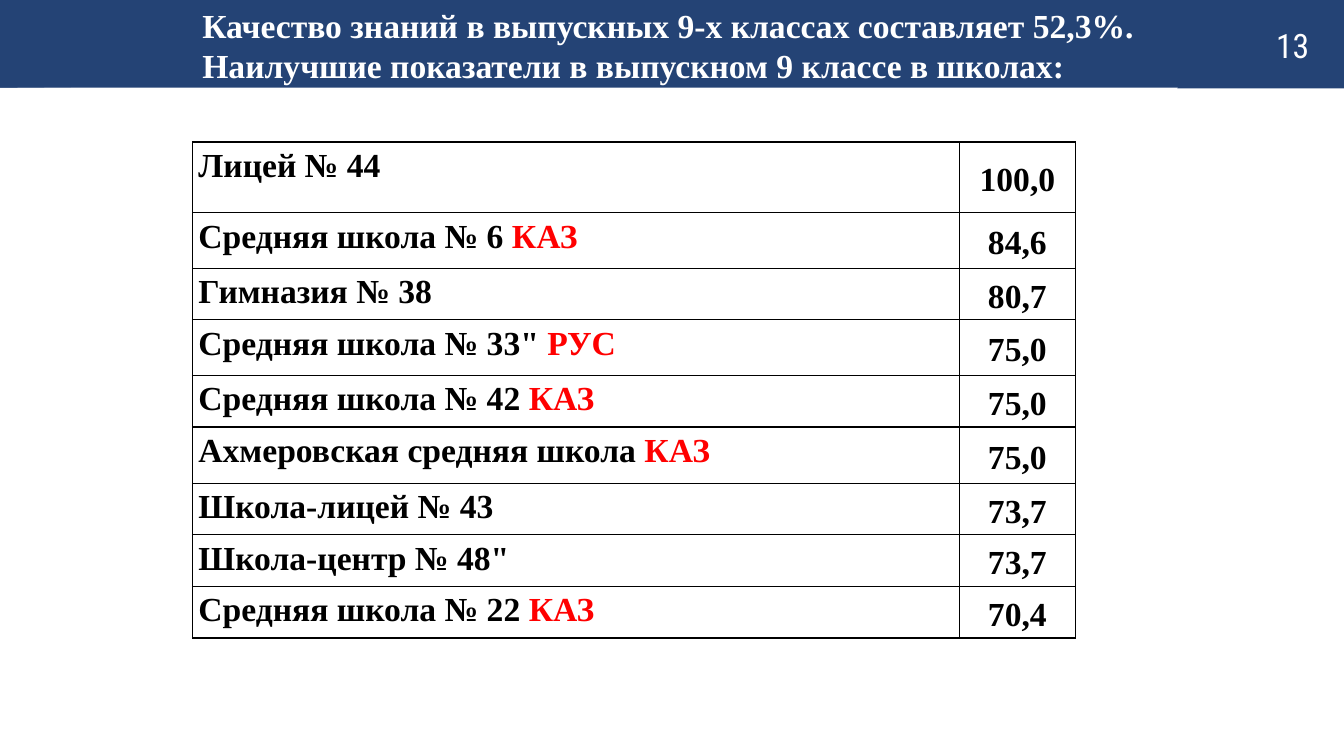
from dataclasses import dataclass

from lxml import etree
from pptx import Presentation
from pptx.dml.color import RGBColor
from pptx.enum.shapes import MSO_SHAPE
from pptx.enum.text import MSO_ANCHOR, PP_ALIGN
from pptx.oxml.ns import qn
from pptx.util import Cm, Pt

RECTANGLE = MSO_SHAPE.RECTANGLE
MIDDLE, TOP = MSO_ANCHOR.MIDDLE, MSO_ANCHOR.TOP
CENTER, LEFT = PP_ALIGN.CENTER, PP_ALIGN.LEFT


@dataclass(frozen=True)
class Theme:
    band: RGBColor = RGBColor(0x24, 0x43, 0x75)
    light: RGBColor = RGBColor(0xFF, 0xFF, 0xFF)
    dark: RGBColor = RGBColor(0x00, 0x00, 0x00)
    accent: RGBColor = RGBColor(0xFF, 0x00, 0x00)
    text_font: str = "Times New Roman"
    number_font: str = "Roboto Condensed"
    text_size: Pt = Pt(24)
    border: Pt = Pt(1)


THEME = Theme()
SLIDE_WIDTH, SLIDE_HEIGHT = 33.87, 19.05
TITLE = (
    "Качество знаний в выпускных 9-х классах составляет 52,3%.",
    "Наилучшие показатели в выпускном 9 классе в школах:",
)
# School, language of teaching, quality of knowledge, row height in cm
SCHOOLS = (
    ("Лицей № 44", "", "100,0", 1.78),
    ("Средняя школа № 6", "КАЗ", "84,6", 1.4),
    ("Гимназия № 38", "", "80,7", 1.3),
    ('Средняя школа № 33"', "РУС", "75,0", 1.4),
    ("Средняя школа № 42", "КАЗ", "75,0", 1.3),
    ("Ахмеровская средняя школа", "КАЗ", "75,0", 1.42),
    ("Школа-лицей № 43", "", "73,7", 1.3),
    ('Школа-центр № 48"', "", "73,7", 1.3),
    ("Средняя школа № 22", "КАЗ", "70,4", 1.3),
)


def set_font(paragraph, color, name=THEME.text_font, bold=True):
    font = paragraph.font
    font.name, font.size, font.bold = name, THEME.text_size, bold
    font.color.rgb = color


def paint_band(shape):
    shape.shadow.inherit = False
    shape.fill.solid()
    shape.fill.fore_color.rgb = THEME.band
    shape.line.fill.background()


def add_outline(slide, points):
    start, *others = [(Cm(x), Cm(y)) for x, y in points]
    builder = slide.shapes.build_freeform(*start, scale=1.0)
    builder.add_line_segments(others, close=True)
    paint_band(builder.convert_to_shape())


def add_header_band(slide, left, top, width, height):
    """Draw the full band with a slanted piece at each end."""
    paint_band(slide.shapes.add_shape(RECTANGLE, Cm(left), Cm(top), Cm(width), Cm(height)))
    right, bottom = left + width, top + height
    add_outline(slide, [(left + 4.22, top), (left, top),
                        (left, bottom), (left + 3.2, bottom - 0.03)])
    add_outline(slide, [(right, top + 0.03), (right - 3.19, top + 0.03),
                        (right - 4.2, bottom + 0.02), (right, bottom + 0.02)])


def add_page_number(slide, left, top, width, height, number):
    frame = slide.shapes.add_textbox(Cm(left), Cm(top), Cm(width), Cm(height)).text_frame
    frame.word_wrap = True
    frame.margin_left, frame.margin_top = Cm(0.03), Cm(0.06)
    frame.margin_right = frame.margin_bottom = 0
    paragraph = frame.paragraphs[0]
    paragraph.text = number
    set_font(paragraph, THEME.light, THEME.number_font, bold=False)


def add_title(slide, left, top, width, height, lines):
    frame = slide.shapes.add_textbox(Cm(left), Cm(top), Cm(width), Cm(height)).text_frame
    frame.word_wrap = False
    frame.text = "\n".join(lines)
    for paragraph in frame.paragraphs:
        set_font(paragraph, THEME.light)


def add_borders(cell):
    properties = cell._tc.get_or_add_tcPr()
    for side in ("a:lnL", "a:lnR", "a:lnT", "a:lnB"):
        line = etree.SubElement(properties, qn(side), w=str(THEME.border))
        fill = etree.SubElement(line, qn("a:solidFill"))
        etree.SubElement(fill, qn("a:srgbClr"), val=str(THEME.dark))


def fill_cell(cell, text, alignment, anchor, language=""):
    add_borders(cell)
    cell.fill.background()
    cell.vertical_anchor = anchor
    cell.margin_left = cell.margin_right = Cm(0.15)
    cell.margin_top = cell.margin_bottom = 0
    paragraph = cell.text_frame.paragraphs[0]
    paragraph.alignment, paragraph.line_spacing = alignment, 1.15
    paragraph.add_run().text = f"{text} " if language else text
    set_font(paragraph, THEME.dark)
    if language:
        run = paragraph.add_run()
        run.text = language
        run.font.color.rgb = THEME.accent


def add_school_table(slide, left, top, width, schools):
    value_width = 2.92
    height = sum(school[-1] for school in schools)
    table = slide.shapes.add_table(
        len(schools), 2, Cm(left), Cm(top), Cm(width), Cm(height)).table
    table.first_row = table.horz_banding = False
    table.columns[0].width = Cm(width - value_width)
    table.columns[1].width = Cm(value_width)
    for row, (name, language, value, row_height) in zip(table.rows, schools):
        row.height = Cm(row_height)
        fill_cell(row.cells[0], name, LEFT, TOP, language)
        fill_cell(row.cells[1], value, CENTER, MIDDLE)


def main():
    presentation = Presentation()
    presentation.slide_width = Cm(SLIDE_WIDTH)
    presentation.slide_height = Cm(SLIDE_HEIGHT)
    slide = presentation.slides.add_slide(presentation.slide_layouts[6])
    add_header_band(slide, 0, 0, SLIDE_WIDTH, 2.21)
    add_page_number(slide, 32.13, 0.56, 1.32, 1.07, "13")
    add_title(slide, 4.85, 0, 24.43, 2.31, TITLE)
    add_school_table(slide, 4.85, 3.58, 22.25, SCHOOLS)
    presentation.save("out.pptx")


if __name__ == "__main__":
    main()
